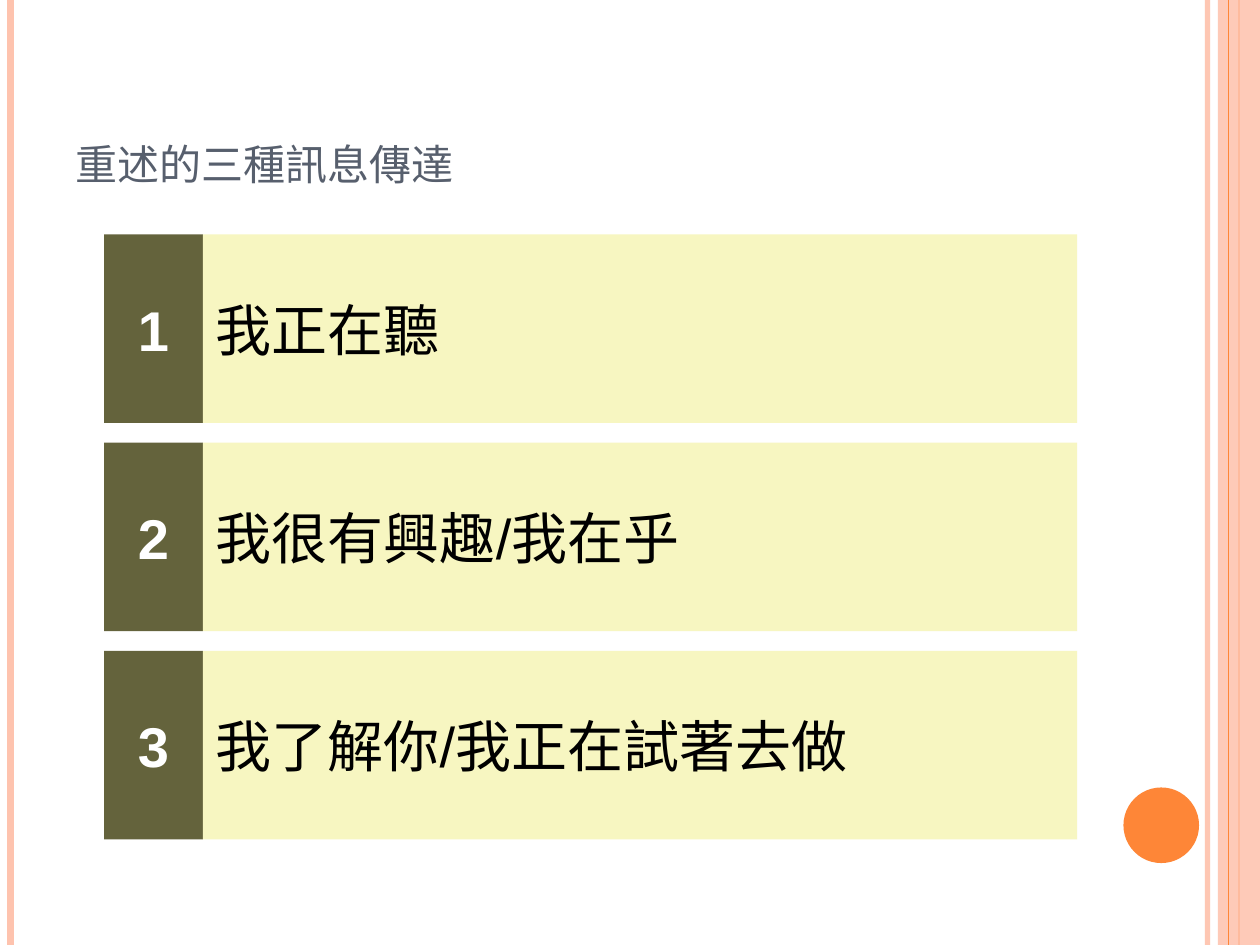
from dataclasses import dataclass

from lxml.etree import SubElement
from pptx import Presentation
from pptx.dml.color import RGBColor
from pptx.enum.shapes import MSO_CONNECTOR, MSO_SHAPE
from pptx.enum.text import MSO_ANCHOR, PP_ALIGN
from pptx.oxml.ns import qn
from pptx.util import Pt


@dataclass(frozen=True)
class Theme:
    """Colours, font and type sizes of the slide."""
    peach: str = "FEC3AE"
    orange: str = "FE8637"
    slate: str = "575F6D"
    olive: str = "64633C"
    cream: str = "F7F6C1"
    white: str = "FFFFFF"
    black: str = "000000"
    font: str = "Arial"
    title_size: int = 24
    message_size: int = 32


THEME = Theme()
MESSAGES = ["我正在聽", "我很有興趣/我在乎", "我了解你/我正在試著去做"]


def set_opacity(shape, percent):
    """Make the first solid colour of a shape partly transparent."""
    colour = next(shape._element.spPr.iter(qn("a:srgbClr")))
    SubElement(colour, qn("a:alpha"), val=str(percent * 1000))


def add_block(slide, kind, box, colour):
    """Add a plain filled shape without outline or shadow."""
    block = slide.shapes.add_shape(kind, *map(Pt, box))
    block.shadow.inherit = False
    block.fill.solid()
    block.fill.fore_color.rgb = RGBColor.from_string(colour)
    block.line.fill.background()
    return block


def write(shape, text, size, colour, anchor, align=PP_ALIGN.LEFT, bold=False):
    """Put one styled paragraph into a shape."""
    frame = shape.text_frame
    frame.word_wrap = True
    frame.vertical_anchor = anchor
    paragraph = frame.paragraphs[0]
    paragraph.text = text
    paragraph.alignment = align
    font = paragraph.font
    font.name, font.size, font.bold = THEME.font, Pt(size), bold
    font.color.rgb = RGBColor.from_string(colour)


def add_stripe(slide, x, height, colour, weight):
    """Add a vertical line over the full height."""
    stripe = slide.shapes.add_connector(
        MSO_CONNECTOR.STRAIGHT, Pt(x), Pt(0), Pt(x), Pt(height))
    stripe.line.color.rgb = RGBColor.from_string(colour)
    stripe.line.width = Pt(weight)
    SubElement(stripe._element.spPr, qn("a:effectLst"))
    return stripe


def add_frame(slide, width, height):
    """Draw the edge stripes, the right band and the corner disc."""
    inner = add_stripe(slide, width - 30, height, THEME.peach, 3)
    set_opacity(inner, 93)
    add_stripe(slide, 6, height, THEME.peach, 4.5)
    add_stripe(slide, width - 12, height, THEME.orange, 1.5)
    band = add_block(slide, MSO_SHAPE.RECTANGLE,
                     (width - 24, 0, 24, height), THEME.peach)
    set_opacity(band, 87)
    add_stripe(slide, width - 18, height, THEME.orange, 0.75)
    add_block(slide, MSO_SHAPE.OVAL,
              (width - 78, height - 90, 43.2, 43.2), THEME.orange)


def add_title(slide, left, top, width, height):
    """Write the heading at the foot of its box."""
    title = slide.shapes.add_textbox(*map(Pt, (left, top, width, height)))
    write(title, "重述的三種訊息傳達", THEME.title_size, THEME.slate,
          MSO_ANCHOR.BOTTOM)


def add_messages(slide, left, top, width, height, gap=11.25, badge_width=56.5):
    """Stack equal rows, each a number badge beside its message."""
    row_height = (height - gap * (len(MESSAGES) - 1)) / len(MESSAGES)
    for index, message in enumerate(MESSAGES):
        y = top + index * (row_height + gap)
        badge = add_block(slide, MSO_SHAPE.RECTANGLE,
                          (left, y, badge_width, row_height), THEME.olive)
        write(badge, str(index + 1), THEME.message_size, THEME.white,
              MSO_ANCHOR.MIDDLE, PP_ALIGN.CENTER, bold=True)
        panel = add_block(
            slide, MSO_SHAPE.RECTANGLE,
            (left + badge_width, y, width - badge_width, row_height),
            THEME.cream)
        write(panel, message, THEME.message_size, THEME.black,
              MSO_ANCHOR.MIDDLE)


def main():
    """Build and save the slide."""
    width, height = 720, 540
    deck = Presentation()
    deck.slide_width, deck.slide_height = Pt(width), Pt(height)
    slide = deck.slides.add_slide(deck.slide_layouts[6])
    add_frame(slide, width, height)
    add_title(slide, 36, 21.6, 588, 90)
    add_messages(slide, 59.5, 134, 556, 345.75)
    deck.save("out.pptx")


if __name__ == "__main__":
    main()
